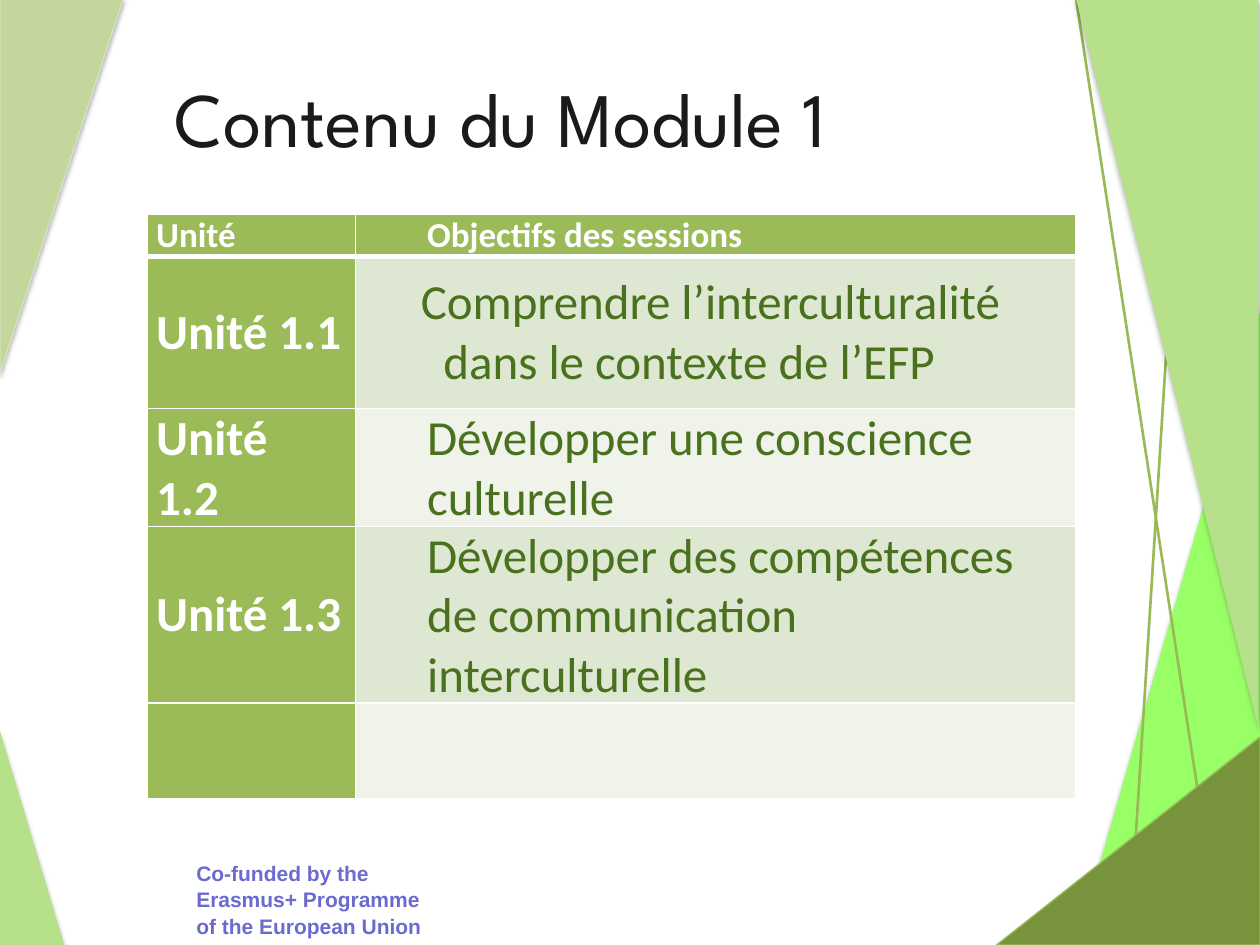
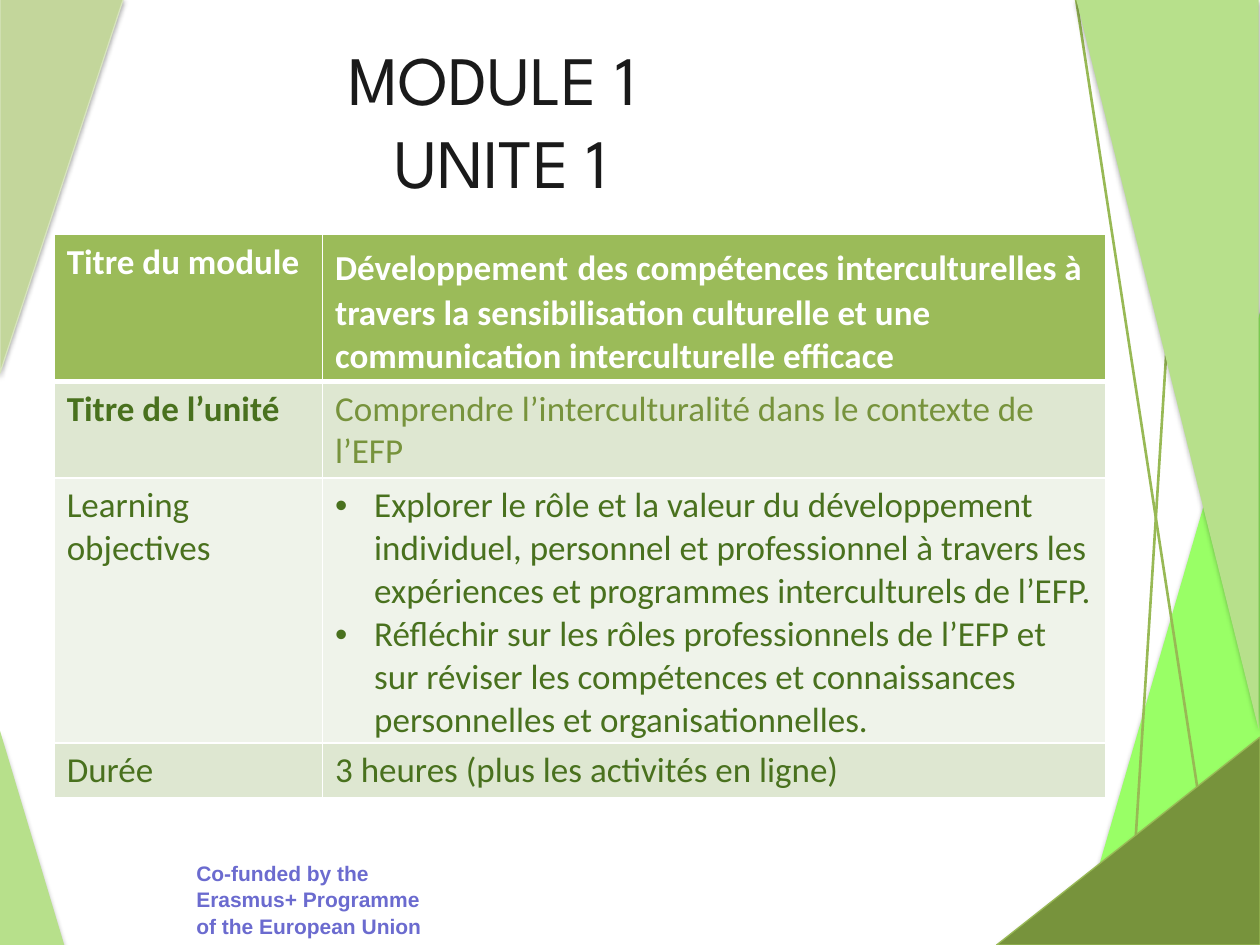
from lxml import etree
from pptx import Presentation
from pptx.dml.color import RGBColor
from pptx.enum.shapes import MSO_CONNECTOR, MSO_SHAPE
from pptx.enum.text import MSO_ANCHOR, MSO_AUTO_SIZE, PP_ALIGN
from pptx.oxml.ns import qn
from pptx.util import Inches, Pt

TRIANGLE = MSO_SHAPE.RIGHT_TRIANGLE
STRAIGHT = MSO_CONNECTOR.STRAIGHT
TOP, MIDDLE = MSO_ANCHOR.TOP, MSO_ANCHOR.MIDDLE
CENTER, JUSTIFY, LEFT = PP_ALIGN.CENTER, PP_ALIGN.JUSTIFY, PP_ALIGN.LEFT
GROW = MSO_AUTO_SIZE.SHAPE_TO_FIT_TEXT

WHITE, INK, LILAC = "FFFFFF", "1A1A1A", "6B6BCF"
HEADER, BAND_DARK, BAND_LIGHT = "9BBB59", "DEE7D1", "EFF3EA"
FOREST, OLIVE, PALE, STEM = "49711E", "77933C", "B7E08B", "98B955"
TITLE_FONT, BODY_FONT, FOOTER_FONT = "League Spartan", "Calibri", "Arial"

FRONT_LEAVES = [
    ((0, 5.8, 0.51, 1.7), "", PALE, None),
    ((0, -0.01, 0.98, 2.97), "V", "C3D69B", "D7E4BD"),
]
RIGHT_LEAVES = [
    ((8.54, -0.01, 1.45, 5.8), "HV", PALE, None),
    ((7.91, 5.85, 2.09, 1.65), "H", OLIVE, STEM),
]
STEMS = [(8.96, 7.5, 9.3, 2.1), (9.65, 7.21, 8.54, -0.01)]


def color(value):
    """Turn a hex string into a colour."""
    return RGBColor.from_string(value)


def child(parent, tag, **attributes):
    """Append a DrawingML element and return it."""
    return etree.SubElement(parent, qn(tag), {k: str(v) for k, v in attributes.items()})


def style_runs(paragraph, size, font, hue, bold=False):
    """Format every run of a paragraph alike."""
    for run in paragraph.runs:
        run.font.size, run.font.name, run.font.bold = Pt(size), font, bold
        run.font.color.rgb = color(hue)


def add_leaf(slide, box, flips, fill, outline, opacity=35, distance=1.8):
    """Draw one flipped triangle with a soft shadow below it."""
    leaf = slide.shapes.add_shape(TRIANGLE, *map(Inches, box))
    leaf.fill.solid()
    leaf.fill.fore_color.rgb = color(fill)
    if outline:
        leaf.line.color.rgb = color(outline)
        leaf.line.width = Pt(0.75)
    else:
        leaf.line.fill.background()
    for axis in flips:
        leaf.element.spPr.find(qn("a:xfrm")).set("flip" + axis, "1")
    shadow = child(child(leaf.element.spPr, "a:effectLst"), "a:outerShdw",
                   blurRad=Pt(3.1), dist=Pt(distance), dir=5400000, rotWithShape=0)
    child(child(shadow, "a:srgbClr", val="000000"), "a:alpha", val=opacity * 1000)


def add_stem(slide, ends):
    """Draw one thin green line."""
    stem = slide.shapes.add_connector(STRAIGHT, *map(Inches, ends))
    stem.line.color.rgb = color(STEM)
    stem.line.width = Pt(1.5)
    child(stem.element.spPr, "a:effectLst")


def add_footer(slide, box):
    """Place the funding statement."""
    footer = slide.shapes.add_textbox(*map(Inches, box)).text_frame
    footer.word_wrap, footer.auto_size = True, GROW
    footer.text = "Co-funded by the Erasmus+ Programme of the European Union"
    footer.paragraphs[0].line_spacing = 1.05
    style_runs(footer.paragraphs[0], 12, FOOTER_FONT, LILAC, True)


def add_backdrop(slide):
    """Draw the leaves, stems and footer shared by the slides."""
    add_leaf(slide, (8.54, 2.41, 1.48, 5.09), "H", "99FF66", None, 38, 1.6)
    add_footer(slide, (1.46, 6.77, 2, 0.71))
    for leaf in FRONT_LEAVES:
        add_leaf(slide, *leaf)
    for ends in STEMS:
        add_stem(slide, ends)
    for leaf in RIGHT_LEAVES:
        add_leaf(slide, *leaf)


def add_title(slide, box, text, size):
    """Write the centred slide title."""
    title = slide.shapes.add_textbox(*map(Inches, box)).text_frame
    title.word_wrap, title.vertical_anchor = True, MIDDLE
    title.text = text
    title.paragraphs[0].alignment = CENTER
    style_runs(title.paragraphs[0], size, TITLE_FONT, INK)


def set_borders(cell, row):
    """Give a cell white edges, with a thick rule under the header."""
    properties = cell._tc.get_or_add_tcPr()
    widths = {"L": 1, "R": 1, "T": 3 if row == 1 else 1, "B": 3 if row == 0 else 1}
    for position, (side, width) in enumerate(widths.items()):
        edge = etree.Element(qn("a:ln" + side), {"w": str(Pt(width))})
        child(child(edge, "a:solidFill"), "a:srgbClr", val=WHITE)
        properties.insert(position, edge)


def add_grid(slide, corner, widths, heights):
    """Add a table with banded fills and white borders."""
    size = (sum(widths), sum(heights))
    grid = slide.shapes.add_table(len(heights), len(widths),
                                  *map(Inches, corner + size)).table
    for column, width in zip(grid.columns, widths):
        column.width = Inches(width)
    for index, (row, height) in enumerate(zip(grid.rows, heights)):
        row.height = Inches(height)
        for cell in row.cells:
            cell.fill.solid()
            band = BAND_DARK if index % 2 else BAND_LIGHT
            cell.fill.fore_color.rgb = color(band if index else HEADER)
            set_borders(cell, index)
    return grid


def indent(paragraph, left, first=0, bullet=None):
    """Indent a paragraph and optionally give it a bullet."""
    properties = paragraph._p.get_or_add_pPr()
    properties.set("marL", str(Inches(left)))
    properties.set("indent", str(Inches(first)))
    if bullet:
        child(properties, "a:buFont", typeface="Arial")
        child(properties, "a:buChar", char=bullet)


def build_contents(slide):
    """Build the overview of the units in the module."""
    add_backdrop(slide)
    add_title(slide, (0.59, 0.3, 6.77, 1.25), "Contenu du Module 1", 44)
    rows = [
        ("Unité", "Objectifs des sessions", (0.5,)),
        ("Unité 1.1", "Comprendre l’interculturalité\ndans le contexte de l’EFP", (0.45, 0.63)),
        ("Unité\v1.2", "Développer une conscience culturelle", (0.5,)),
        ("Unité 1.3", "Développer des compétences de communication interculturelle", (0.5,)),
    ]
    grid = add_grid(slide, (1.17, 1.7), (1.65, 5.72), (0.3, 1.21, 0.85, 1.28, 0.76))
    for index, (unit, goal, indents) in enumerate(rows):
        size = 28 if index else 20
        unit_cell, goal_cell = grid.rows[index].cells
        for cell, text in ((unit_cell, unit), (goal_cell, goal)):
            cell.text_frame.text = text
            cell.margin_left = cell.margin_right = Inches(0.07)
            cell.margin_top = cell.margin_bottom = 0
            cell.vertical_anchor = MIDDLE if index else TOP
        unit_line = unit_cell.text_frame.paragraphs[0]
        unit_line.alignment = JUSTIFY if index < 3 else LEFT
        style_runs(unit_line, size, BODY_FONT, WHITE, True)
        for line, left in zip(goal_cell.text_frame.paragraphs, indents):
            indent(line, left)
            style_runs(line, size, BODY_FONT, FOREST if index else WHITE, not index)
    for row in grid.rows:
        row.cells[0].fill.fore_color.rgb = color(HEADER)


def build_unit(slide):
    """Build the description of the first unit."""
    add_backdrop(slide)
    add_title(slide, (0.74, 0.3, 6.47, 1.29), "MODULE 1 \vUNITE 1", 39.6)
    module_title = ("Développement", " ", "des compétences interculturelles à travers la "
                    "sensibilisation culturelle et une communication interculturelle efficace")
    objectives = (
        "Explorer le rôle et la valeur du développement individuel, personnel et "
        "professionnel à travers les expériences et programmes interculturels de l’EFP.\n"
        "Réfléchir sur les rôles professionnels de l’EFP et sur réviser les compétences "
        "et connaissances personnelles et organisationnelles.")
    rows = [
        ("Titre du module", "", WHITE, WHITE),
        ("Titre de l’unité", "Comprendre l’interculturalité dans le contexte de l’EFP",
         FOREST, OLIVE),
        ("Learning objectives", objectives, FOREST, FOREST),
        ("Durée", "3 heures (plus les activités en ligne)", FOREST, FOREST),
    ]
    grid = add_grid(slide, (0.43, 1.86), (2.13, 6.22), [0.41] * len(rows))
    for index, (label, detail, label_hue, detail_hue) in enumerate(rows):
        label_cell, detail_cell = grid.rows[index].cells
        label_cell.text_frame.text = label
        style_runs(label_cell.text_frame.paragraphs[0], 20, BODY_FONT, label_hue, index < 2)
        detail_cell.text_frame.text = detail
        for line in detail_cell.text_frame.paragraphs:
            if detail == objectives:
                indent(line, 0.31, -0.31, "•")
            style_runs(line, 20, BODY_FONT, detail_hue)
    heading = grid.cell(0, 1).text_frame.paragraphs[0]
    for part in module_title:
        heading.add_run().text = part
    style_runs(heading, 20, BODY_FONT, WHITE, True)
    heading.runs[1].font.size = Pt(24)


def main():
    """Build the deck and save it."""
    deck = Presentation()
    deck.slide_width, deck.slide_height = Inches(10), Inches(7.5)
    for build in (build_contents, build_unit):
        build(deck.slides.add_slide(deck.slide_layouts[6]))
    deck.save("out.pptx")


if __name__ == "__main__":
    main()
